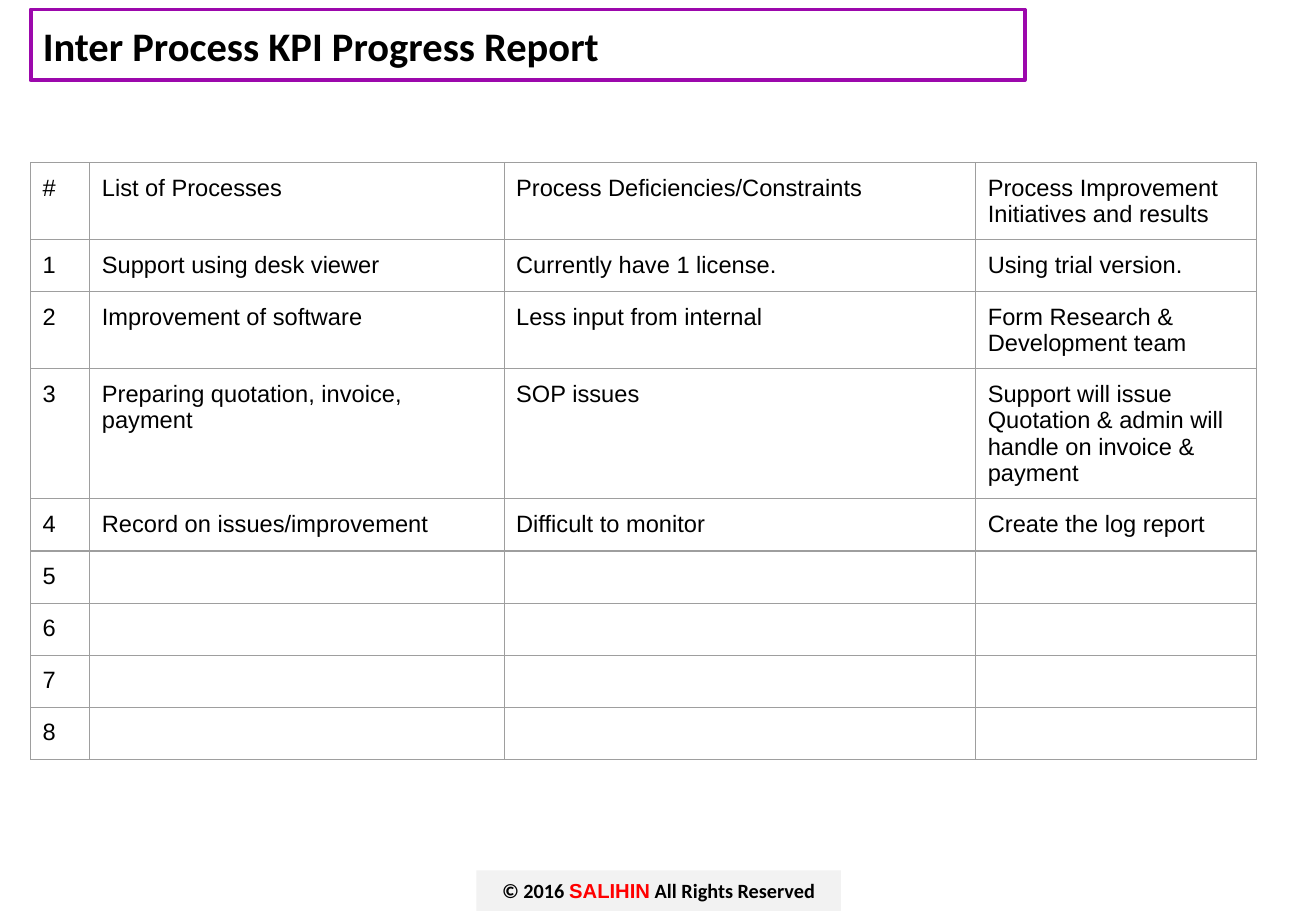
from lxml.etree import SubElement
from pptx import Presentation
from pptx.dml.color import RGBColor
from pptx.enum.shapes import MSO_SHAPE as Shape
from pptx.enum.text import MSO_ANCHOR as Anchor, PP_ALIGN as Align
from pptx.oxml.ns import qn
from pptx.util import Cm, Pt


def color(value):
    return RGBColor.from_string(value)


def write(paragraph, text, font="Arial", size=14, bold=False, ink="000000", align=Align.LEFT):
    paragraph.alignment = align
    run = paragraph.add_run()
    run.text = text
    run.font.name = font
    run.font.size = Pt(size)
    run.font.bold = bold
    run.font.color.rgb = color(ink)


deck = Presentation()
deck.slide_width, deck.slide_height = Cm(27.51), Cm(19.05)
report = deck.slides.add_slide(deck.slide_layouts[5])

copyright_bar = report.shapes.add_shape(Shape.RECTANGLE, Cm(9.96), Cm(18.2), Cm(7.62), Cm(0.85))
copyright_bar.shadow.inherit = False
copyright_bar.fill.solid()
copyright_bar.fill.fore_color.rgb = color("F2F2F2")
copyright_bar.line.fill.background()
copyright_bar.text_frame.vertical_anchor = Anchor.MIDDLE
for text, font, ink in [
    ("© 2016 ", "Calibri", "000000"),
    ("SALIHIN", "Arial", "FF0000"),
    (" All Rights Reserved", "Calibri", "000000"),
]:
    write(copyright_bar.text_frame.paragraphs[0], text, font=font, size=12, bold=True,
          ink=ink, align=Align.CENTER)

heading = report.shapes.title
heading.left, heading.top, heading.width, heading.height = Cm(0.64), Cm(0.2), Cm(20.78), Cm(1.48)
heading.line.color.rgb = color("9C08AC")
heading.line.width = Pt(2.25)
heading.text_frame.vertical_anchor = Anchor.MIDDLE
write(heading.text_frame.paragraphs[0], "Inter Process KPI Progress Report",
      font="Calibri", size=24, bold=True)

processes = [
    ("#", "List of Processes", "Process Deficiencies/Constraints",
     "Process Improvement Initiatives and results"),
    ("1", "Support using desk viewer", "Currently have 1 license.", "Using trial version."),
    ("2", "Improvement of software", "Less input from internal",
     "Form Research & Development team"),
    ("3", "Preparing quotation, invoice, payment", "SOP issues",
     "Support will issue Quotation & admin will handle on invoice & payment"),
    ("4", "Record on issues/improvement", "Difficult to monitor", "Create the log report"),
] + [(str(number), "", "", "") for number in range(5, 9)]
column_widths = [1.24, 8.66, 9.86, 5.87]
row_height = 1.09

progress = report.shapes.add_table(
    len(processes), len(column_widths), Cm(0.64), Cm(3.4),
    Cm(sum(column_widths)), Cm(row_height * len(processes))).table
progress.first_row = False
progress.horz_banding = False
for column, width in zip(progress.columns, column_widths):
    column.width = Cm(width)

for row, entries in enumerate(processes):
    progress.rows[row].height = Cm(row_height)
    for column, entry in enumerate(entries):
        cell = progress.cell(row, column)
        if entry:
            cell.margin_left = cell.margin_right = Cm(0.25)
            cell.margin_top = cell.margin_bottom = Cm(0.25)
            write(cell.text_frame.paragraphs[0], entry)
        borders = cell._tc.get_or_add_tcPr()
        for side in ("a:lnL", "a:lnR", "a:lnT", "a:lnB"):
            edge = SubElement(borders, qn(side), w=str(Pt(0.75)))
            SubElement(SubElement(edge, qn("a:solidFill")), qn("a:srgbClr"), val="9E9E9E")
        cell.fill.background()

deck.save("out.pptx")
